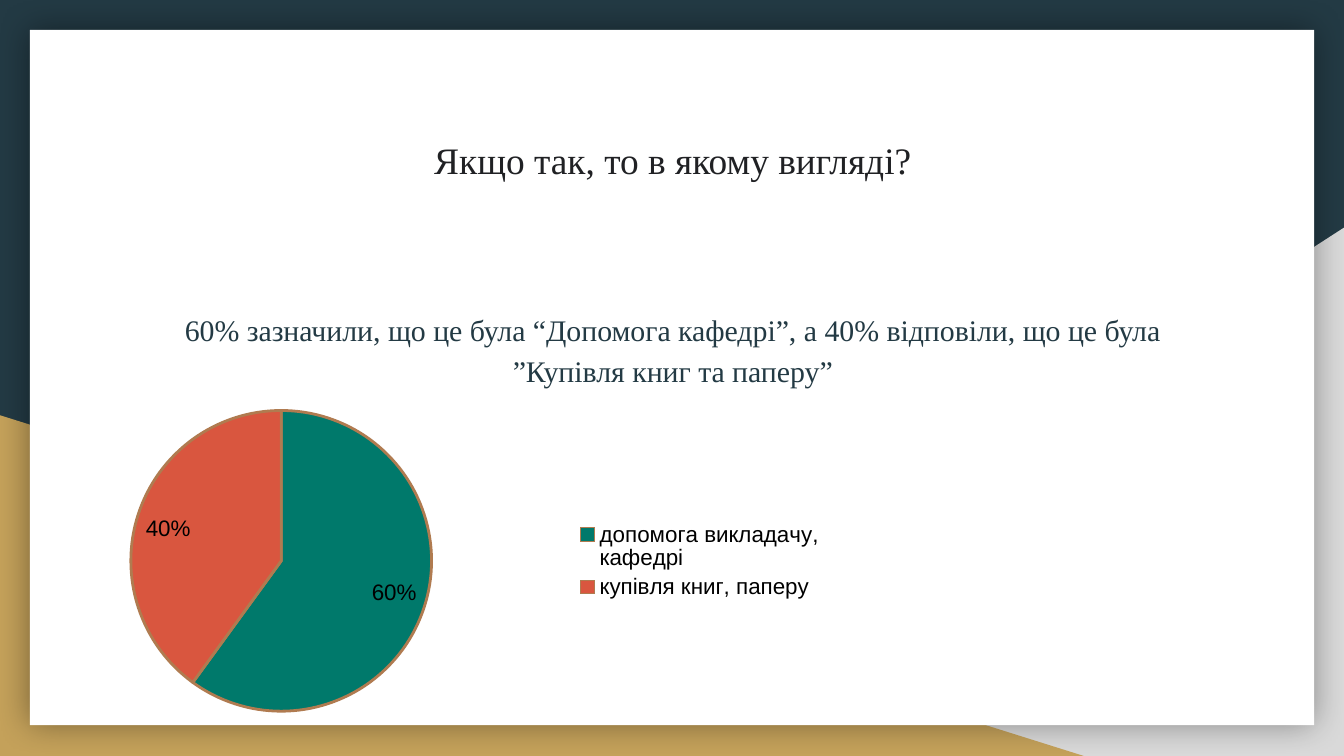
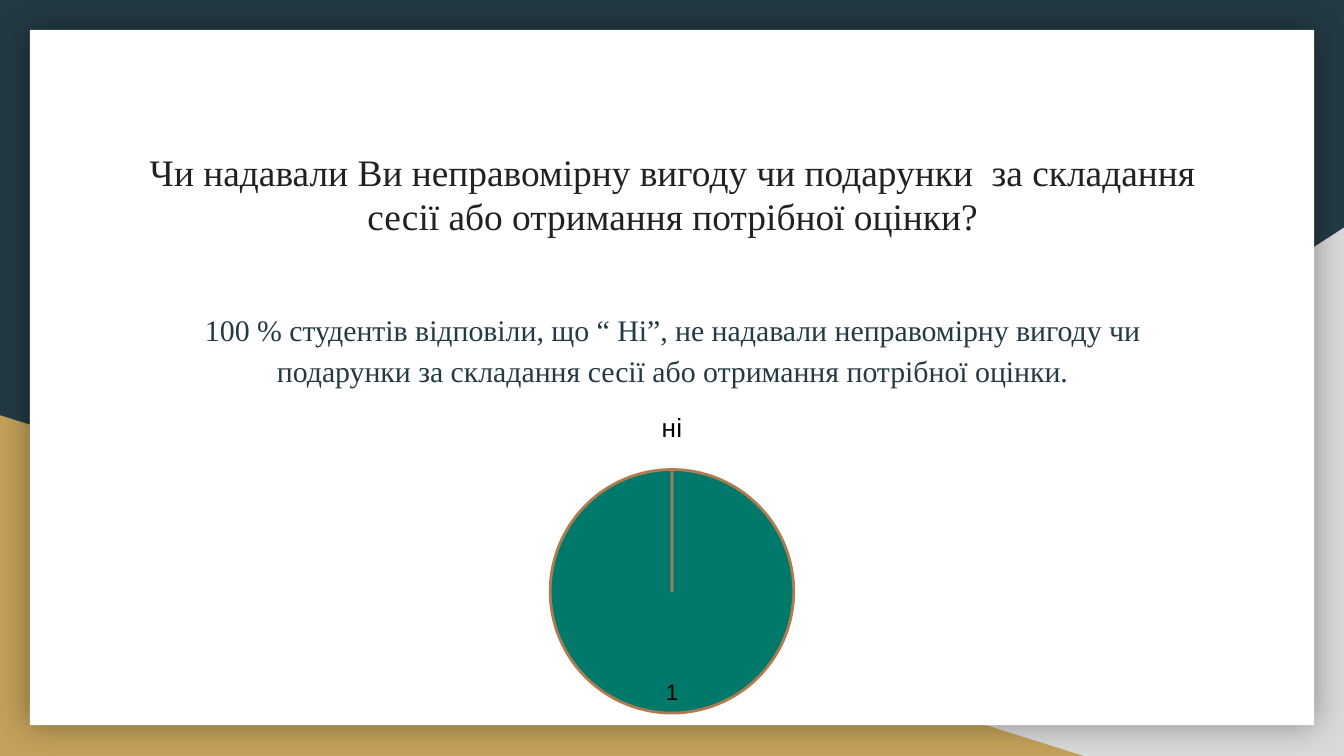
import pptx
import pptx.chart.data
import pptx.dml.color
import pptx.enum.chart
import pptx.enum.shapes
import pptx.enum.text
import pptx.oxml
import pptx.oxml.ns
import pptx.util
from dataclasses import dataclass

Pt = pptx.util.Pt


@dataclass(frozen=True)
class Theme:
    navy: str = "233A44"
    gray: str = "D9D9D9"
    gold: str = "C4A15A"
    white: str = "FFFFFF"
    black: str = "000000"
    heading: str = "202124"
    slices: tuple = ("00796B", "D9563F")
    slice_edge: str = "B07B50"
    text_font: str = "Times New Roman"
    chart_font: str = "Arial"
    title_size: int = 20
    body_size: int = 16
    chart_title_size: int = 14
    label_size: int = 12


THEME = Theme()


def color(value):
    return pptx.dml.color.RGBColor.from_string(value)


def style_font(font, name, size, ink):
    font.name = name
    font.size = Pt(size)
    font.bold = False
    font.color.rgb = color(ink)


def points(*lengths):
    return [Pt(length) for length in lengths]


def add_text(page, text, *, area, size, ink, spacing=1.0, after=0):
    frame = page.shapes.add_textbox(*points(*area)).text_frame
    frame.word_wrap = True
    frame.vertical_anchor = pptx.enum.text.MSO_ANCHOR.TOP
    frame.margin_left = frame.margin_right = Pt(7.2)
    frame.margin_top = frame.margin_bottom = Pt(7.2)
    para = frame.paragraphs[0]
    para.alignment = pptx.enum.text.PP_ALIGN.CENTER
    para.line_spacing = spacing
    para.space_after = Pt(after)
    span = para.add_run()
    span.text = text
    style_font(span.font, THEME.text_font, size, ink)


def add_panel(page, kind, area, fill, flipped=False):
    panel = page.shapes.add_shape(kind, *points(*area))
    panel.shadow.inherit = False
    panel.fill.solid()
    panel.fill.fore_color.rgb = color(fill)
    panel.line.fill.background()
    if flipped:
        panel._element.spPr.find(pptx.oxml.ns.qn("a:xfrm")).set("flipH", "1")
    return panel


def add_glow(panel):
    effects = panel._element.spPr.find(pptx.oxml.ns.qn("a:effectLst"))
    effects.append(pptx.oxml.parse_xml(
        f'<a:outerShdw {pptx.oxml.ns.nsdecls("a")} blurRad="{Pt(18)}" dist="0" dir="0" '
        f'algn="ctr" rotWithShape="0"><a:srgbClr val="{THEME.black}">'
        '<a:alpha val="40000"/></a:srgbClr></a:outerShdw>'))


def add_page(deck, title, title_top, body, after=0):
    page = deck.slides.add_slide(deck.slide_layouts[6])
    page.background.fill.solid()
    page.background.fill.fore_color.rgb = color(THEME.navy)
    shapes = pptx.enum.shapes.MSO_SHAPE
    add_panel(page, shapes.RIGHT_TRIANGLE, (282, 122, 438, 283), THEME.gray, flipped=True)
    add_panel(page, shapes.RIGHT_TRIANGLE, (0, 222.5, 580.5, 182.5), THEME.gold)
    add_glow(add_panel(page, shapes.RECTANGLE, (16, 16, 688, 372.5), THEME.white))
    add_text(page, title, area=(65, title_top, 591, 75),
             size=THEME.title_size, ink=THEME.heading)
    add_text(page, body, area=(65, 157, 591, 193),
             size=THEME.body_size, ink=THEME.navy, spacing=1.15, after=after)
    return page


def add_pie(page, area, name, categories, values, number_format, title=None, legend=False):
    data = pptx.chart.data.CategoryChartData(number_format=number_format)
    data.categories = categories
    data.add_series(name, values)
    chart = page.shapes.add_chart(
        pptx.enum.chart.XL_CHART_TYPE.PIE, *points(*area), data).chart
    style_font(chart.font, THEME.chart_font, THEME.label_size, THEME.black)
    chart.has_title = title is not None
    if title is not None:
        frame = chart.chart_title.text_frame
        frame.text = title
        style_font(frame.paragraphs[0].runs[0].font, THEME.chart_font,
                   THEME.chart_title_size, THEME.black)
        chart.chart_title.include_in_layout = False
    chart.has_legend = legend
    if legend:
        chart.legend.position = pptx.enum.chart.XL_LEGEND_POSITION.RIGHT
        chart.legend.include_in_layout = False
        style_font(chart.legend.font, THEME.chart_font, THEME.label_size, THEME.black)
    plot = chart.plots[0]
    plot.vary_by_categories = True
    for index, fill in enumerate(THEME.slices):
        piece = plot.series[0].points[index].format
        piece.fill.solid()
        piece.fill.fore_color.rgb = color(fill)
        piece.line.color.rgb = color(THEME.slice_edge)
        piece.line.width = Pt(1.5)
    labels = plot.series[0].data_labels
    labels.show_value = True
    labels.show_percentage = False
    labels.number_format = number_format
    labels.number_format_is_linked = False
    labels.position = pptx.enum.chart.XL_LABEL_POSITION.INSIDE_END
    style_font(labels.font, THEME.chart_font, THEME.label_size, THEME.black)


def main():
    deck = pptx.Presentation()
    deck.slide_width, deck.slide_height = points(720, 405)

    page = add_page(
        deck, "Якщо так, то в якому вигляді?", 66.5,
        "60% зазначили, що це була “Допомога кафедрі”, а 40% відповіли, "
        "що це була ”Купівля книг та паперу”")
    add_pie(page, (-6, 210, 458, 181), "Series 1",
            ["допомога викладачу,  кафедрі", "купівля книг, паперу"],
            [0.6, 0.4], "0%", legend=True)

    page = add_page(
        deck, "Чи надавали Ви неправомірну вигоду чи подарунки  за складання "
        "сесії або отримання потрібної оцінки?", 72.5,
        "100 % студентів відповіли, що “ Ні”, не надавали неправомірну вигоду чи "
        "подарунки за складання сесії або отримання потрібної оцінки.", after=12)
    add_pie(page, (180, 210, 360, 182), "ні", ["1", "2"], [1, None], "General", title="ні")

    deck.save("out.pptx")


if __name__ == "__main__":
    main()
